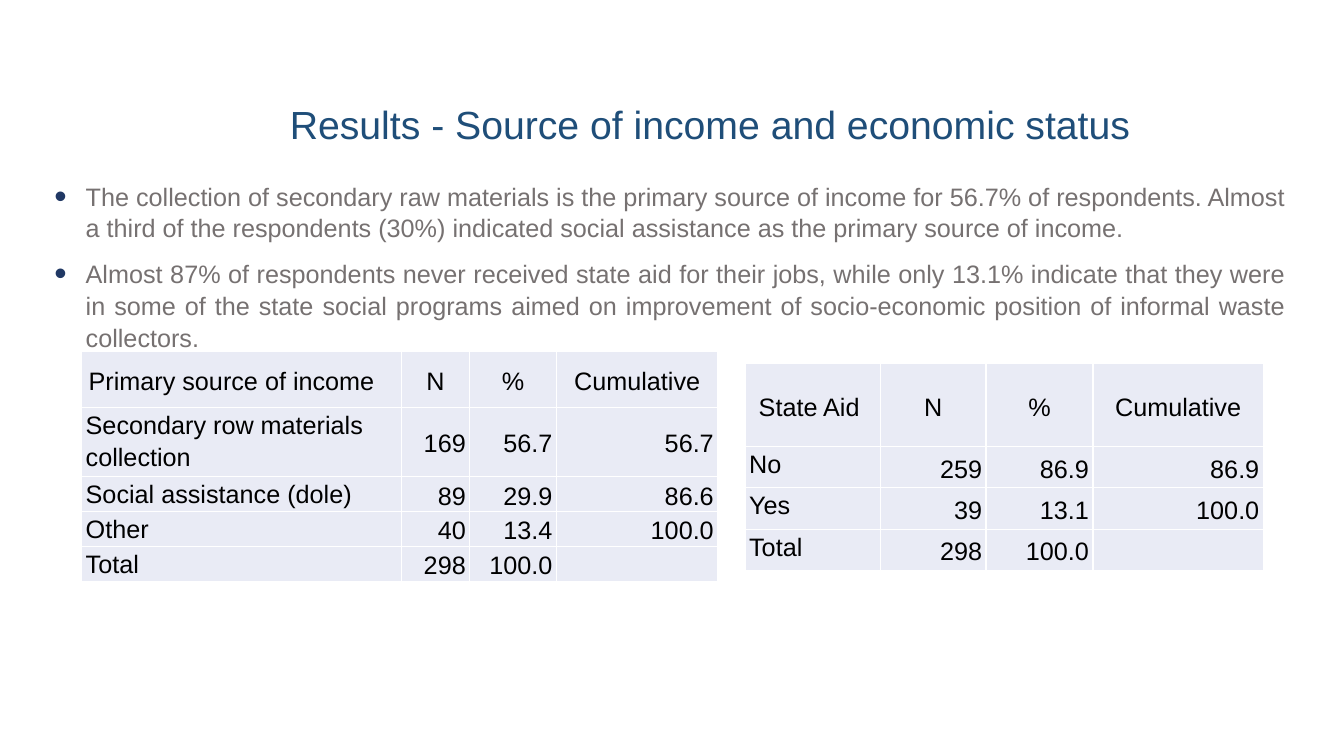
"""Build the slide on source of income and economic status."""
from dataclasses import dataclass

from lxml.etree import SubElement
from pptx import Presentation
from pptx.dml.color import RGBColor
from pptx.enum.text import MSO_ANCHOR, PP_ALIGN
from pptx.oxml.ns import qn
from pptx.util import Inches, Pt

FONT = "Arial"
TITLE_COLOR = "1F4E79"
BODY_COLOR = "767171"
BULLET_COLOR = "203864"
CELL_FILL = "E9EBF5"
CELL_LINE = "FFFFFF"
PAD = Inches(0.04)
HANGING = Inches(0.31)

TITLE = "Results - Source of income and economic status"
BULLETS = [
    "The collection of secondary raw materials is the primary source of income for 56.7% of "
    "respondents. Almost a third of the respondents (30%) indicated social assistance as the "
    "primary source of income.",
    "Almost 87% of respondents never received state aid for their jobs, while only 13.1% indicate "
    "that they were in some of the state social programs aimed on improvement of socio-economic "
    "position of informal waste collectors.",
]


@dataclass
class TableSpec:
    """Place, grid and content of one table."""
    left: float
    top: float
    cols: list[float]
    heights: list[float]
    rows: list[list[str]]
    label_align: PP_ALIGN


TABLES = [
    TableSpec(0.81, 3.49, [3.17, 0.68, 0.86, 1.6], [0.55, 0.55, 0.27, 0.27, 0.27], [
        [" Primary source of income", "N", "%", "Cumulative"],
        ["Secondary row materials collection", "169", "56.7", "56.7"],
        ["Social assistance (dole)", "89", "29.9", "86.6"],
        ["Other", "40", "13.4", "100.0"],
        ["Total", "298", "100.0", ""],
    ], PP_ALIGN.LEFT),
    TableSpec(7.39, 3.61, [1.34, 1.05, 1.06, 1.69], [0.82, 0.41, 0.41, 0.41], [
        ["State Aid ", "N", "%", "Cumulative"],
        ["No", "259", "86.9", "86.9"],
        ["Yes", "39", "13.1", "100.0"],
        ["Total", "298", "100.0", ""],
    ], PP_ALIGN.CENTER),
]


def rgb(color: str) -> RGBColor:
    """Turn a hex string into a colour."""
    return RGBColor.from_string(color)


def apply(obj, values: dict) -> None:
    """Set each named attribute on an object."""
    for name, value in values.items():
        setattr(obj, name, value)


def write(p, text: str, size: float, color: str, **values) -> None:
    """Write one formatted run into a paragraph."""
    apply(p, values)
    r = p.add_run()
    r.text = text
    apply(r.font, {"name": FONT, "size": Pt(size)})
    r.font.color.rgb = rgb(color)


def add_box(s, left: float, top: float, width: float, height: float, anchor: MSO_ANCHOR):
    """Add a wrapping text box without margins and return its frame."""
    sp = s.shapes.add_textbox(Inches(left), Inches(top), Inches(width), Inches(height))
    tf = sp.text_frame
    apply(tf, {"word_wrap": True, "vertical_anchor": anchor, "margin_left": 0,
               "margin_right": 0, "margin_top": 0, "margin_bottom": 0})
    return tf


def add_bullet(p) -> None:
    """Give a paragraph a coloured hanging bullet."""
    pPr = p._p.get_or_add_pPr()
    pPr.set("marL", str(HANGING))
    pPr.set("indent", str(-HANGING))
    SubElement(SubElement(pPr, qn("a:buClr")), qn("a:srgbClr"), val=BULLET_COLOR)
    SubElement(pPr, qn("a:buSzPct"), val="140000")
    SubElement(pPr, qn("a:buFont"), typeface=FONT)
    SubElement(pPr, qn("a:buChar"), char="•")


def style_cell(cell, anchor: MSO_ANCHOR) -> None:
    """Set margins, borders and fill of a table cell."""
    apply(cell, {"vertical_anchor": anchor, "margin_left": 0, "margin_right": 0,
                 "margin_top": 0, "margin_bottom": 0})
    tcPr = cell._tc.get_or_add_tcPr()
    for side in ("a:lnL", "a:lnR", "a:lnT", "a:lnB"):
        ln = SubElement(tcPr, qn(side), w=str(Pt(1)))
        SubElement(SubElement(ln, qn("a:solidFill")), qn("a:srgbClr"), val=CELL_LINE)
    cell.fill.solid()
    cell.fill.fore_color.rgb = rgb(CELL_FILL)


def add_data_table(s, spec: TableSpec) -> None:
    """Draw one table from its description."""
    sp = s.shapes.add_table(len(spec.rows), len(spec.cols), Inches(spec.left), Inches(spec.top),
                            Inches(sum(spec.cols)), Inches(sum(spec.heights)))
    table = sp.table
    apply(table, {"first_row": False, "horz_banding": False})
    for col, width in zip(table.columns, spec.cols):
        col.width = Inches(width)
    for i, (height, texts) in enumerate(zip(spec.heights, spec.rows)):
        table.rows[i].height = Inches(height)
        for j, text in enumerate(texts):
            cell = table.cell(i, j)
            is_label = i > 0 and j == 0
            style_cell(cell, MSO_ANCHOR.TOP if is_label else MSO_ANCHOR.MIDDLE)
            if not text:
                continue
            if i == 0:
                align = PP_ALIGN.CENTER if j else spec.label_align
            else:
                align = PP_ALIGN.RIGHT if j else PP_ALIGN.LEFT
            p = cell.text_frame.paragraphs[0]
            write(p, text, 18, "000000", alignment=align, line_spacing=1.15)
            if i or j:
                pPr = p._p.get_or_add_pPr()
                for margin in ("marL", "marR"):
                    pPr.set(margin, str(PAD))


def main() -> None:
    """Create the presentation and save it."""
    prs = Presentation()
    apply(prs, {"slide_width": Inches(13.33), "slide_height": Inches(7.5)})
    s = prs.slides.add_slide(prs.slide_layouts[6])

    tf = add_box(s, 1.55, 0.99, 10.98, 0.53, MSO_ANCHOR.MIDDLE)
    write(tf.paragraphs[0], TITLE, 28, TITLE_COLOR, alignment=PP_ALIGN.CENTER, line_spacing=0.9)

    tf = add_box(s, 0.54, 1.78, 12.21, 4.88, MSO_ANCHOR.TOP)
    for i, text in enumerate(BULLETS):
        p = tf.add_paragraph() if i else tf.paragraphs[0]
        add_bullet(p)
        write(p, text, 18, BODY_COLOR, alignment=PP_ALIGN.JUSTIFY, line_spacing=1.05,
              space_before=Pt(10 if i else 0))

    for spec in TABLES:
        add_data_table(s, spec)
    prs.save("out.pptx")


if __name__ == "__main__":
    main()
